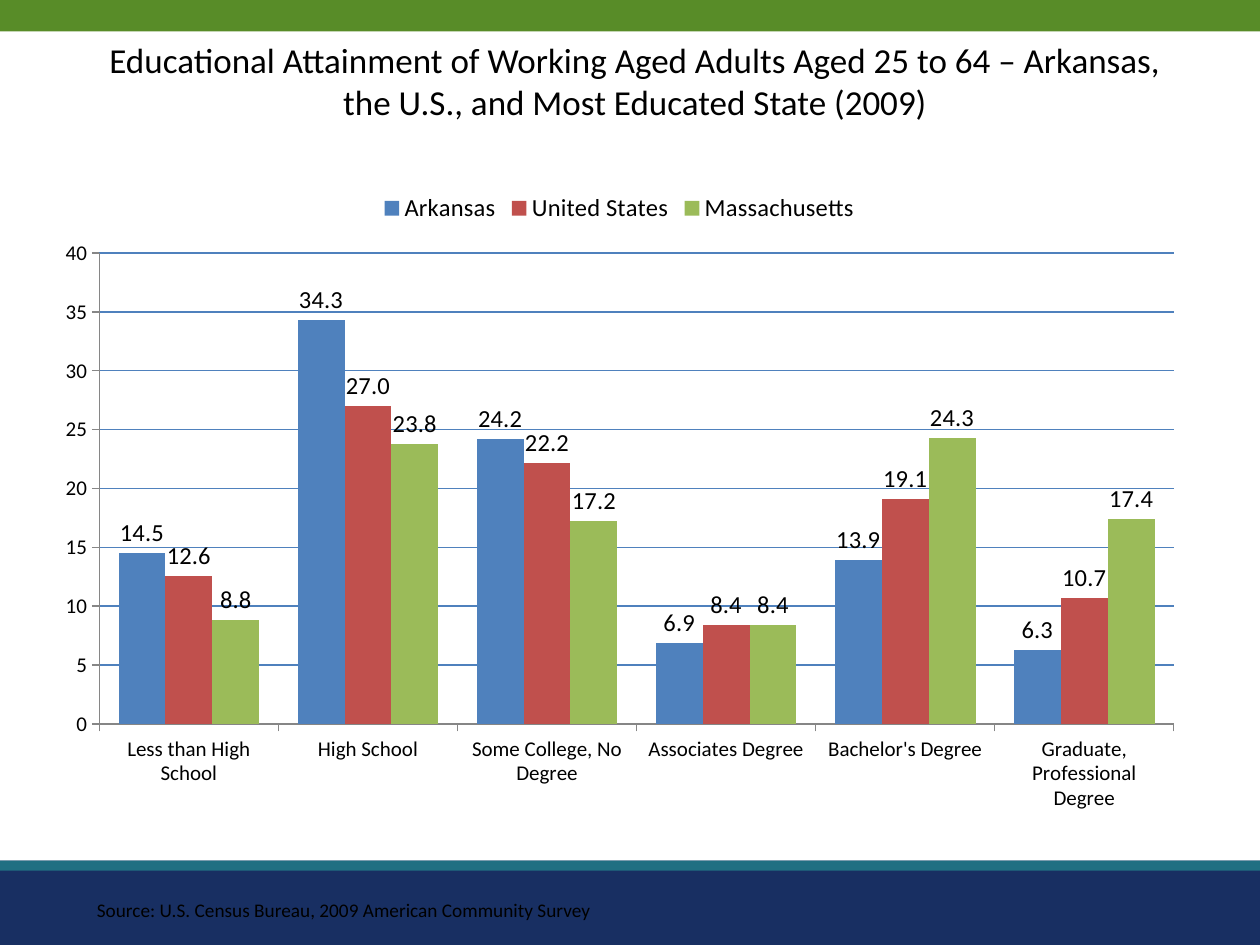
from lxml import etree
from pptx import Presentation
from pptx.chart.data import CategoryChartData as ChartData
from pptx.dml.color import RGBColor as RGB
from pptx.enum.chart import XL_CHART_TYPE as Kind, XL_LABEL_POSITION as Spot
from pptx.enum.chart import XL_LEGEND_POSITION as Side, XL_TICK_MARK as Tick
from pptx.enum.shapes import MSO_SHAPE as Shape
from pptx.enum.text import PP_ALIGN as Align
from pptx.oxml.ns import qn
from pptx.util import Pt

PX = 9144  # 100 px to the inch
FACE = "Calibri"
BLACK = RGB(0, 0, 0)
NAVY = RGB(0x18, 0x2F, 0x62)
GREEN = RGB(0x58, 0x8C, 0x28)
TEAL = RGB(0x20, 0x6F, 0x82)
BLUE = RGB(0x4F, 0x81, 0xBD)
RED = RGB(0xC0, 0x50, 0x4D)
LIME = RGB(0x9B, 0xBB, 0x59)
GREY = RGB(0x86, 0x86, 0x86)

deck = Presentation()
deck.slide_width, deck.slide_height = 1000 * PX, 750 * PX
slide = deck.slides.add_slide(deck.slide_layouts[6])


def style(font, size):
    font.name, font.size, font.bold = FACE, Pt(size), False
    font.color.rgb = BLACK


def write(text, *, left, top, width, height, size, align=Align.LEFT):
    box = slide.shapes.add_textbox(left * PX, top * PX, width * PX, height * PX)
    box.text_frame.word_wrap = True
    para = box.text_frame.paragraphs[0]
    para.alignment = align
    run = para.add_run()
    run.text = text
    style(run.font, size)


# Bands across the top and foot
for top, height, color in [(683, 67, NAVY), (0, 25, GREEN), (683, 8, TEAL)]:
    band = slide.shapes.add_shape(Shape.RECTANGLE, 0, top * PX, 1000 * PX, height * PX)
    band.shadow.inherit = False
    band.fill.solid()
    band.fill.fore_color.rgb = color
    band.line.fill.background()

# Title and source line
write("Educational Attainment of Working Aged Adults Aged 25 to 64 – Arkansas, "
      "the U.S., and Most Educated State (2009)",
      left=75, top=26, width=858, height=77, size=20, align=Align.CENTER)
write("Source: U.S. Census Bureau, 2009 American Community Survey",
      left=67, top=708, width=825, height=29, size=11)

# Chart data
data = ChartData(number_format="0.0")
data.categories = ["Less than High School", "High School", "Some College, No Degree",
                   "Associates Degree", "Bachelor's Degree",
                   "Graduate, Professional Degree"]
states = [
    ("Arkansas", BLUE, (14.5, 34.3, 24.2, 6.9, 13.9, 6.3)),
    ("United States", RED, (12.6, 27.0, 22.2, 8.4, 19.1, 10.7)),
    ("Massachusetts", LIME, (8.8, 23.8, 17.2, 8.4, 24.3, 17.4)),
]
for name, color, vals in states:
    data.add_series(name, vals)

frame = slide.shapes.add_chart(Kind.COLUMN_CLUSTERED, 33 * PX, 142 * PX,
                               917 * PX, 512 * PX, data)
chart = frame.chart
chart.has_title = False
style(chart.font, 10)

# Columns and their labels
plot = chart.plots[0]
plot.gap_width, plot.overlap = 82, 0
plot.vary_by_categories = False
for bars, (name, color, vals) in zip(plot.series, states):
    bars.format.fill.solid()
    bars.format.fill.fore_color.rgb = color
    tags = bars.data_labels
    tags.show_value = True
    tags.position = Spot.OUTSIDE_END
    tags.number_format, tags.number_format_is_linked = "0.0", False
    style(tags.font, 14)

# Axes and grid
cats, scale = chart.category_axis, chart.value_axis
for axis in (cats, scale):
    axis.major_tick_mark, axis.minor_tick_mark = Tick.OUTSIDE, Tick.NONE
    axis.format.line.color.rgb = GREY
    axis.format.line.width = Pt(0.75)
    style(axis.tick_labels.font, 12)
scale.minimum_scale, scale.maximum_scale, scale.major_unit = 0, 40, 5
scale.tick_labels.number_format = "0"
scale.tick_labels.number_format_is_linked = False
scale.has_major_gridlines = True
grid = scale.major_gridlines.format.line
grid.color.rgb, grid.width = BLUE, Pt(0.75)

# Legend
chart.has_legend = True
chart.legend.position = Side.TOP
chart.legend.include_in_layout = False
style(chart.legend.font, 14)

# Fixed plot area, as shares of the chart
area = chart.plots[0]._element.getparent()
for old in area.findall(qn("c:layout")):
    area.remove(old)
layout = etree.Element(qn("c:layout"))
area.insert(0, layout)
manual = etree.SubElement(layout, qn("c:manualLayout"))
for tag, val in [("layoutTarget", "inner"), ("xMode", "edge"), ("yMode", "edge"),
                 ("x", "0.05"), ("y", "0.115"), ("w", "0.93"), ("h", "0.73")]:
    etree.SubElement(manual, qn("c:" + tag)).set("val", val)

deck.save("out.pptx")
